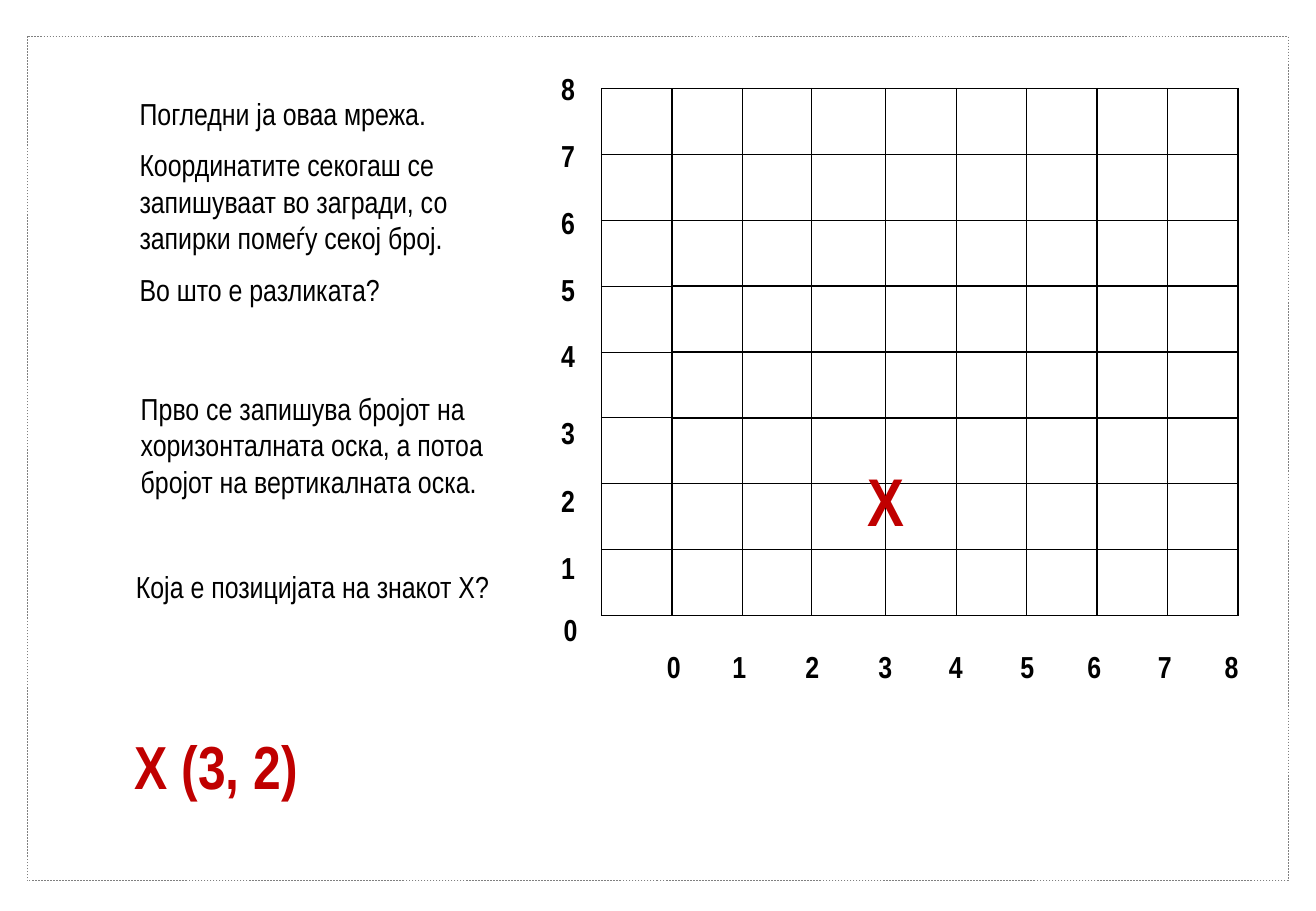
from lxml import etree
from pptx import Presentation
from pptx.dml.color import RGBColor
from pptx.enum import dml, shapes, text
from pptx.oxml import ns
from pptx.util import Inches, Pt

BLACK = RGBColor(0x00, 0x00, 0x00)
RED = RGBColor(0xC0, 0x00, 0x00)
GRAY = RGBColor(0x80, 0x80, 0x80)
FONT = "Arial Narrow"


def add_text(slide, left, top, width, height, lines, size=18, color=BLACK, bold=False,
             alignment=text.PP_ALIGN.LEFT):
    frame = slide.shapes.add_textbox(
        Inches(left), Inches(top), Inches(width), Inches(height)).text_frame
    frame.word_wrap = True
    for index, line in enumerate(lines):
        paragraph = frame.add_paragraph() if index else frame.paragraphs[0]
        paragraph.text = line
        paragraph.alignment = alignment
        if index:
            paragraph.space_before = Pt(9)
        paragraph.font.name = FONT
        paragraph.font.size = Pt(size)
        paragraph.font.bold = bold
        paragraph.font.color.rgb = color


def add_border(cell, side, points):
    properties = cell._tc.get_or_add_tcPr()
    line = etree.SubElement(properties, ns.qn(f"a:{side}"), w=str(Pt(points)))
    fill = etree.SubElement(line, ns.qn("a:solidFill"))
    etree.SubElement(fill, ns.qn("a:srgbClr"), val=str(BLACK))


presentation = Presentation()
presentation.slide_width = Inches(10.83)
presentation.slide_height = Inches(7.5)
slide = presentation.slides.add_slide(presentation.slide_layouts[6])

frame_shape = slide.shapes.add_shape(
    shapes.MSO_SHAPE.RECTANGLE, Inches(0.22), Inches(0.3), Inches(10.38), Inches(6.95))
frame_shape.shadow.inherit = False
frame_shape.fill.background()
frame_shape.line.color.rgb = GRAY
frame_shape.line.width = Pt(0.25)
frame_shape.line.dash_style = dml.MSO_LINE.DASH

column_widths = [0.58, 0.58, 0.57, 0.61] + [0.58] * 5
grid = slide.shapes.add_table(
    8, 9, Inches(4.95), Inches(0.73), Inches(5.24), Inches(4.34)).table
grid.first_row = False
grid.horz_banding = False
for column, width in zip(grid.columns, column_widths):
    column.width = Inches(width)
for row in grid.rows:
    row.height = Inches(0.5425)
    for index, cell in enumerate(row.cells):
        thin = 1 if index else 0.75
        for side, points in (("lnL", thin), ("lnR", 1), ("lnT", thin), ("lnB", thin)):
            add_border(cell, side, points)
        cell.fill.background()

horizontal_lefts = [5.39, 5.93, 6.53, 7.13, 7.71, 8.3, 8.85, 9.43]
for number, left in enumerate(horizontal_lefts):
    add_text(slide, left, 5.29, 0.43, 0.4, [str(number)], bold=True)
add_text(slide, 9.86, 5.29, 0.43, 0.4, ["8"], bold=True, alignment=text.PP_ALIGN.RIGHT)

add_text(slide, 4.54, 4.98, 0.43, 0.4, ["0"], bold=True)
vertical_tops = [4.47, 3.92, 3.36, 2.73, 2.18, 1.63, 1.08, 0.53]
for number, top in enumerate(vertical_tops, start=1):
    add_text(slide, 4.52, top, 0.43, 0.4, [str(number)], bold=True)

add_text(slide, 7.04, 3.73, 0.6, 0.77, ["X"], size=40, color=RED, bold=True)

add_text(slide, 1.05, 0.73, 3.24, 1.92, [
    "Погледни ја оваа мрежа.",
    "Координатите секогаш се запишуваат во загради, со запирки помеѓу секој број.",
    "Во што е разликата?",
])
add_text(slide, 1.06, 3.16, 3.24, 1.01, [
    "Прво се запишува бројот на хоризонталната оска, а потоа бројот на вертикалната оска."])
add_text(slide, 1.02, 4.63, 3.28, 0.4, ["Која е позицијата на знакот Х?"])
add_text(slide, 1.01, 5.95, 3.28, 0.71, ["Х (3, 2)"], size=36, color=RED, bold=True)

presentation.save("out.pptx")
